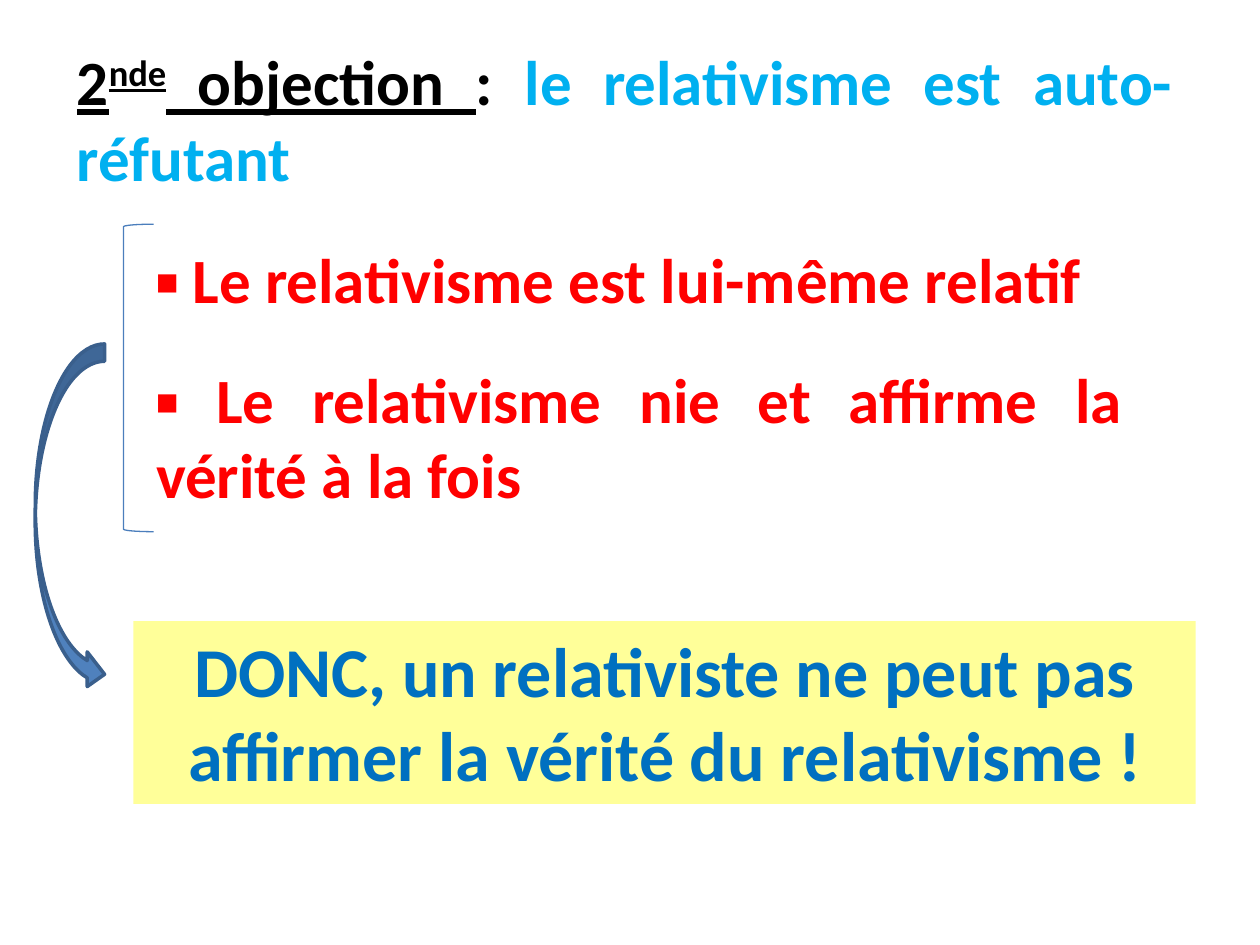
from pptx import Presentation
from pptx.dml.color import RGBColor
from pptx.enum.shapes import MSO_SHAPE
from pptx.enum.text import MSO_ANCHOR, MSO_AUTO_SIZE, PP_ALIGN
from pptx.util import Inches, Pt
from lxml import etree

LEFT, CENTER, JUSTIFY = PP_ALIGN.LEFT, PP_ALIGN.CENTER, PP_ALIGN.JUSTIFY
TOP = MSO_ANCHOR.TOP
NO_AUTOFIT = MSO_AUTO_SIZE.NONE
RECTANGLE = MSO_SHAPE.RECTANGLE
LEFT_BRACKET = MSO_SHAPE.LEFT_BRACKET
CURVED_ARROW = MSO_SHAPE.CURVED_RIGHT_ARROW

FONT = "Calibri"
COLORS = {
    "heading": "000000",
    "thesis": "00B0F0",
    "argument": "FF0000",
    "conclusion": "0070C0",
    "conclusion_fill": "FFFF99",
    "bracket": "4B7EBC",
    "arrow_fill": "4F81BD",
    "arrow_line": "3A5F8C",
}

HEADING = [
    ("2", "heading", True, False),
    ("nde", "heading", True, True),
    (" objection ", "heading", True, False),
    (": ", "heading", False, False),
    ("le relativisme est auto-réfutant", "thesis", False, False),
]
HEADING_BOX = (0.51, 0.29, 8.9, 1.31)
ARGUMENTS = [
    ("▪ Le relativisme est lui-même relatif", (1.14, 1.86, 8.19, 0.71), LEFT),
    ("▪ Le relativisme nie et affirme la vérité à la fois ", (1.14, 2.81, 7.87, 1.31), JUSTIFY),
]
CONCLUSION = "DONC, un relativiste ne peut pas affirmer la vérité du relativisme !"
CONCLUSION_BOX = (1.06, 4.93, 8.43, 1.45)
BRACKET_BOX = (0.98, 1.78, 0.24, 2.44)
ARROW_BOX = (0.28, 2.73, 0.55, 2.76)


def rgb(name):
    return RGBColor.from_string(COLORS[name])


def format_run(run, color, size=36):
    run.font.name = FONT
    run.font.size = Pt(size)
    run.font.bold = True
    run.font.color.rgb = rgb(color)


def prepare_frame(frame, alignment):
    frame.word_wrap = True
    frame.auto_size = NO_AUTOFIT
    frame.vertical_anchor = TOP
    frame.paragraphs[0].alignment = alignment


def write(frame, text, color, alignment, size=36):
    frame.text = text
    prepare_frame(frame, alignment)
    format_run(frame.paragraphs[0].runs[0], color, size)


def add_figure(slide, preset, box, fill=None, line=None, width=0):
    figure = slide.shapes.add_shape(preset, *map(Inches, box))
    figure.shadow.inherit = False
    if fill:
        figure.fill.solid()
        figure.fill.fore_color.rgb = rgb(fill)
    else:
        figure.fill.background()
    if line:
        figure.line.color.rgb = rgb(line)
        figure.line.width = Pt(width)
    else:
        figure.line.fill.background()
    return figure


def add_heading(slide):
    title = slide.shapes.title
    title.left, title.top, title.width, title.height = map(Inches, HEADING_BOX)
    prepare_frame(title.text_frame, JUSTIFY)
    for text, color, underlined, raised in HEADING:
        run = title.text_frame.paragraphs[0].add_run()
        run.text = text
        format_run(run, color)
        run.font.underline = underlined
        if raised:
            run._r.get_or_add_rPr().set("baseline", "30000")


def main():
    deck = Presentation()
    deck.slide_width, deck.slide_height = Inches(10), Inches(7.5)
    slide = deck.slides.add_slide(deck.slide_layouts[5])

    add_heading(slide)
    for text, box, alignment in ARGUMENTS:
        argument = slide.shapes.add_textbox(*map(Inches, box))
        write(argument.text_frame, text, "argument", alignment)

    conclusion = add_figure(slide, RECTANGLE, CONCLUSION_BOX, "conclusion_fill")
    write(conclusion.text_frame, CONCLUSION, "conclusion", CENTER, 40)
    add_figure(slide, LEFT_BRACKET, BRACKET_BOX, line="bracket", width=0.75)
    add_figure(slide, CURVED_ARROW, ARROW_BOX, "arrow_fill", "arrow_line", 2)

    deck.save("out.pptx")


if __name__ == "__main__":
    main()
